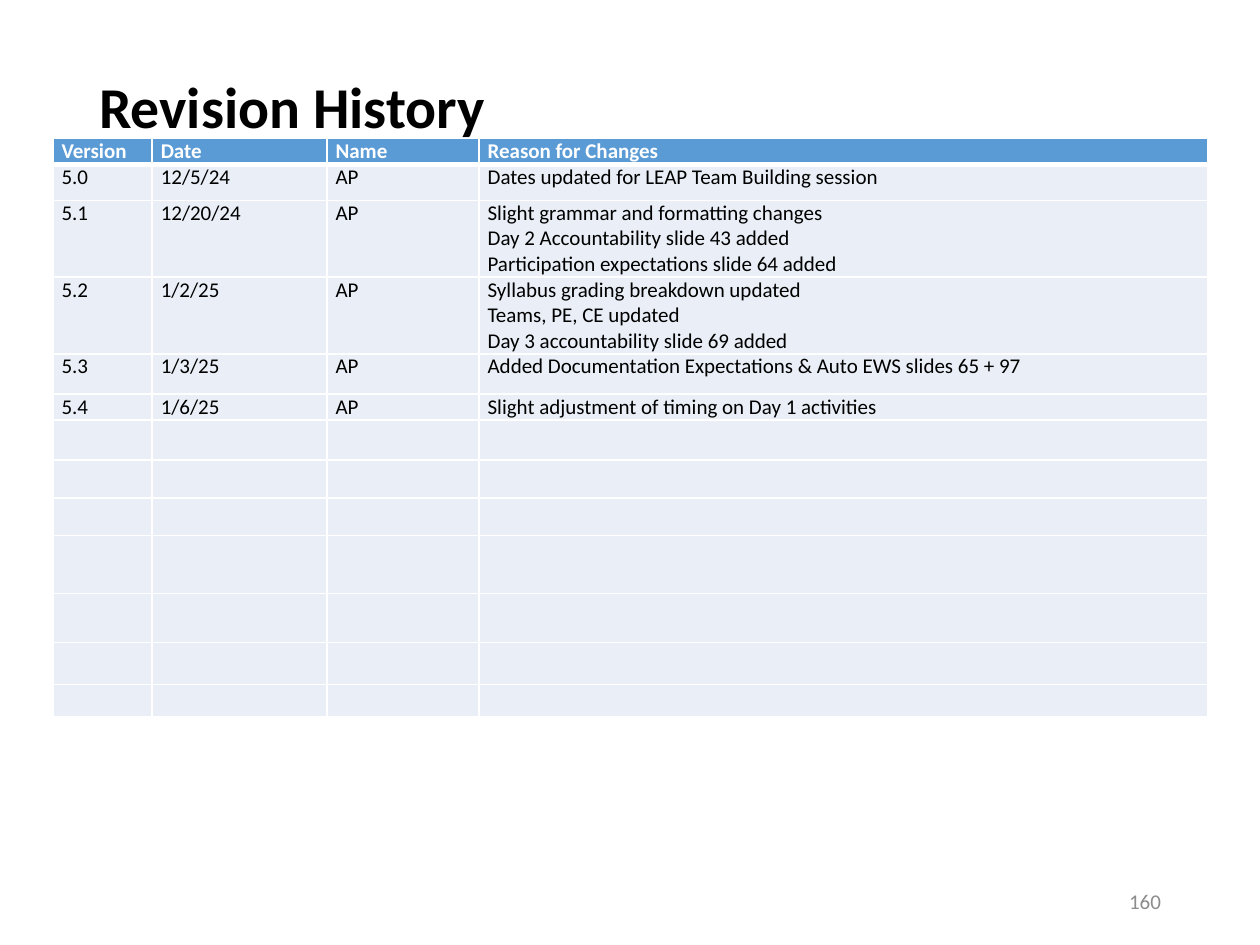
from lxml.etree import SubElement as Sub
from pptx import Presentation
from pptx.dml.color import RGBColor as Rgb
from pptx.enum.text import MSO_ANCHOR as Anchor, MSO_AUTO_SIZE as Fit, PP_ALIGN as Align
from pptx.oxml.ns import qn
from pptx.util import Pt

COLORS = {"black": "000000", "white": "FFFFFF", "head": "5B9BD5",
          "body": "EAEFF7", "gray": "8C8C8C"}

WIDTHS = [56.7, 99.9, 86.9, 416.7]
HEIGHTS = [14.6, 20.6, 43.9, 43.9, 23, 14.6,
           23, 21.6, 21.6, 33.1, 28.1, 23.8, 18.5]
ROWS = [
    ("Version", "Date", "Name", "Reason for Changes"),
    ("5.0", "12/5/24", "AP", "Dates updated for LEAP Team Building session"),
    ("5.1", "12/20/24", "AP", "Slight grammar and formatting changes\n"
     "Day 2 Accountability slide 43 added\n"
     "Participation expectations slide 64 added"),
    ("5.2", "1/2/25", "AP", "Syllabus grading breakdown updated\n"
     "Teams, PE, CE updated\n"
     "Day 3 accountability slide 69 added"),
    ("5.3", "1/3/25", "AP",
     "Added Documentation Expectations & Auto EWS slides 65 + 97"),
    ("5.4", "1/6/25", "AP", "Slight adjustment of timing on Day 1 activities"),
]


class Deck:
    def __init__(self, slide, font="Calibri", size=12):
        self.slide, self.font, self.size = slide, font, size

    def color(self, name):
        return Rgb.from_string(COLORS[name])

    def text(self, frame, text, color="black", size=None, bold=False,
             align=Align.LEFT):
        for i, line in enumerate(text.split("\n")):
            para = frame.add_paragraph() if i else frame.paragraphs[0]
            para.alignment = align
            run = para.add_run()
            run.text = line
            font = run.font
            font.name, font.size, font.bold = self.font, Pt(size or self.size), bold
            font.color.rgb = self.color(color)

    def title(self, text, x, y, w, h, size, lift):
        """Fill the title; lift is the extra space kept below its text."""
        shape = self.slide.shapes.title
        shape.left, shape.top, shape.width, shape.height = map(Pt, (x, y, w, h))
        frame = shape.text_frame
        frame.auto_size, frame.word_wrap = Fit.NONE, True
        frame.vertical_anchor = Anchor.MIDDLE
        frame.margin_bottom = Pt(3.6 + lift)
        self.text(frame, text, size=size, bold=True)
        frame.paragraphs[0].line_spacing = 0.9

    def label(self, text, x, y, w, h, color, align):
        frame = self.slide.shapes.add_textbox(*map(Pt, (x, y, w, h))).text_frame
        frame.word_wrap, frame.vertical_anchor = True, Anchor.MIDDLE
        self.text(frame, text, color, align=align)

    def edge(self, cell, side, width):
        props = cell._tc.get_or_add_tcPr()
        line = Sub(props, qn(f"a:ln{side}"), w=str(Pt(width)))
        fill = Sub(line, qn("a:solidFill"))
        Sub(fill, qn("a:srgbClr"), val=COLORS["white"])

    def cell(self, cell, text, row):
        head = row == 0
        cell.margin_left = cell.margin_right = Pt(5)
        cell.margin_top = cell.margin_bottom = 0
        for side in "LRTB":
            thick = (row, side) in ((0, "B"), (1, "T"))
            self.edge(cell, side, 3 if thick else 1)
        cell.fill.solid()
        cell.fill.fore_color.rgb = self.color("head" if head else "body")
        frame = cell.text_frame
        if text:
            self.text(frame, text, "white" if head else "black", bold=head)
        else:
            # An empty cell needs a small size so that its row stays low.
            Sub(frame.paragraphs[0]._p, qn("a:endParaRPr"), sz=str(self.size * 100))

    def table(self, rows, x, y, widths, heights):
        area = map(Pt, (x, y, sum(widths), sum(heights)))
        table = self.slide.shapes.add_table(len(heights), len(widths), *area).table
        table.horz_banding = False
        for col, width in zip(table.columns, widths):
            col.width = Pt(width)
        for r, height in enumerate(heights):
            table.rows[r].height = Pt(height)
            for c in range(len(widths)):
                self.cell(table.cell(r, c), rows[r][c] if r < len(rows) else "", r)


def main():
    prs = Presentation()
    prs.slide_width, prs.slide_height = Pt(720), Pt(540)
    deck = Deck(prs.slides.add_slide(prs.slide_layouts[5]))
    deck.title("Revision History", 49.5, 28.8, 621, 104.4, size=33, lift=36)
    deck.table(ROWS, 30.2, 79.2, WIDTHS, HEIGHTS)
    deck.label("160", 508.5, 500.5, 162, 28.8, "gray", Align.RIGHT)
    prs.save("out.pptx")


if __name__ == "__main__":
    main()
